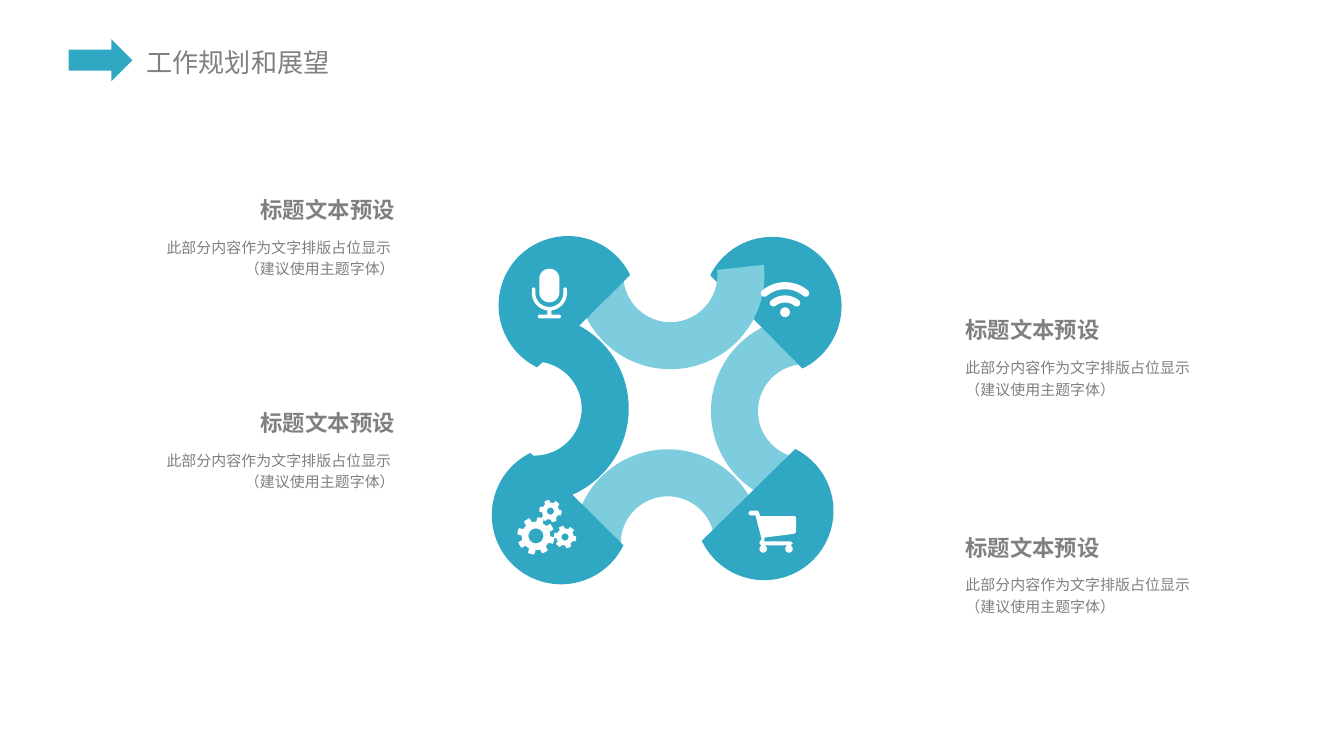
import math

import pptx
import pptx.dml.color
import pptx.enum.shapes
import pptx.enum.text
import pptx.util
from lxml import etree

Pt = pptx.util.Pt
RGBColor = pptx.dml.color.RGBColor
SHAPE = pptx.enum.shapes.MSO_SHAPE
ALIGN = pptx.enum.text.PP_ALIGN
ANCHOR = pptx.enum.text.MSO_ANCHOR

TEAL = RGBColor(0x30, 0xA8, 0xC4)
LIGHT_TEAL = RGBColor(0x7E, 0xCD, 0xDF)
WHITE = RGBColor(0xFF, 0xFF, 0xFF)
GRAY = RGBColor(0x80, 0x80, 0x80)
FONT = "Noto Sans CJK SC"

ARC_SIZE = 100.8
CHORD_SIZE = 74.2
CHORD_ADJUSTMENTS = (28.09, 158.76)

HEADING = "标题文本预设"
BODY = "此部分内容作为文字排版占位显示 \n（建议使用主题字体）"


def paint(s, color):
    s.shadow.inherit = False
    s.fill.solid()
    s.fill.fore_color.rgb = color
    s.line.fill.background()


def add_preset(slide, kind, x, y, w, h, color, rot=0, flip=None):
    s = slide.shapes.add_shape(kind, Pt(x), Pt(y), Pt(w), Pt(h))
    paint(s, color)
    s.rotation = rot
    if flip:
        s.element.spPr.xfrm.set(flip, "1")
    return s


def add_chord(slide, x, y, rot, flip=None):
    s = add_preset(slide, SHAPE.CHORD, x, y, CHORD_SIZE, CHORD_SIZE, TEAL, rot, flip)
    for i, value in enumerate(CHORD_ADJUSTMENTS):
        s.adjustments[i] = value


def add_text(slide, text, x, y, w, h, size, bold=False, align=ALIGN.LEFT,
             anchor=ANCHOR.TOP, wrap=False, spacing=None, margins=(0, 0)):
    tf = slide.shapes.add_textbox(Pt(x), Pt(y), Pt(w), Pt(h)).text_frame
    tf.word_wrap = wrap
    tf.vertical_anchor = anchor
    tf.margin_left = tf.margin_right = Pt(margins[0])
    tf.margin_top = tf.margin_bottom = Pt(margins[1])
    p = tf.paragraphs[0]
    p.text = text.replace("\n", "\v")
    p.alignment = align
    p.line_spacing = spacing
    for r in p.runs:
        r.font.size = Pt(size)
        r.font.bold = bold
        r.font.name = FONT
        r.font.color.rgb = GRAY
        rPr = r.font._element
        ea = etree.SubElement(rPr, rPr.find("{*}latin").tag.replace("latin", "ea"))
        ea.set("typeface", FONT)


def add_text_block(slide, x, y, align):
    add_text(slide, HEADING, x, y, 129.6, 23, 12, bold=True, align=align,
             anchor=ANCHOR.BOTTOM)
    add_text(slide, BODY, x, y + 22.5, 129.6, 36.7, 8, align=align,
             anchor=ANCHOR.MIDDLE, wrap=True, spacing=1.2)


# Outlines for icons: each is a list of points
def arc(cx, cy, radius, start=0, end=360, steps=24):
    angles = [math.radians(start + (end - start) * i / steps) for i in range(steps + 1)]
    return [(cx + radius * math.cos(a), cy + radius * math.sin(a)) for a in angles]


def rect(x1, y1, x2, y2):
    return [(x1, y1), (x2, y1), (x2, y2), (x1, y2)]


def band(cx, cy, outer, inner, start, end):
    """Ring segment with round ends."""
    middle, cap = (outer + inner) / 2, (outer - inner) / 2
    ends = [arc(cx, cy, middle, a, a, 1)[0] for a in (start, end)]
    return (arc(cx, cy, outer, start, end) + arc(*ends[1], cap, end, end + 180, 8)
            + arc(cx, cy, inner, end, start)
            + arc(*ends[0], cap, start + 180, start + 360, 8))


def gear(cx, cy, radius, hole, teeth, turn):
    root, pitch = radius * 0.76, 360 / teeth
    outline = []
    for i in range(teeth):
        a = turn + i * pitch
        outline += arc(cx, cy, radius, a - pitch * 0.22, a + pitch * 0.22, 3)
        outline += arc(cx, cy, root, a + pitch * 0.3, a + pitch * 0.7, 3)
    return [outline, arc(cx, cy, hole)]


def add_icon(slide, outlines):
    fb = None
    for outline in outlines:
        points = [(Pt(x), Pt(y)) for x, y in outline]
        if fb is None:
            fb = slide.shapes.build_freeform(*points[0])
        else:
            fb.move_to(*points[0])
        fb.add_line_segments(points[1:], close=True)
    paint(fb.convert_to_shape(), WHITE)


def add_icons(slide):
    # Gears
    add_icon(slide, gear(287.1, 287.1, 10, 4, 8, 15)
             + gear(294.9, 273.8, 6, 1.9, 6, 10)
             + gear(302.7, 287.7, 6, 1.9, 6, 10))

    # Microphone: capsule, cradle, stem, base
    cx = 294.3
    add_icon(slide, [
        arc(cx, 149.4, 5.4, 180, 360) + arc(cx, 156.6, 5.4, 0, 180),
        arc(cx, 157, 9.4, 0, 180) + arc(cx - 8.45, 155, 0.95, 180, 360, 8)
        + arc(cx, 157, 7.5, 180, 0) + arc(cx + 8.45, 155, 0.95, 180, 360, 8),
        rect(cx - 1.1, 166.3, cx + 1.1, 168.6),
        arc(289.1, 169.6, 1, 90, 270, 8) + arc(299.5, 169.6, 1, -90, 90, 8)])

    # Wireless signal
    cx, cy = 420.6, 170.3
    add_icon(slide, [band(cx, cy, 19.1, 15.3, 230, 310),
                     band(cx, cy, 12, 8.2, 232, 308),
                     arc(cx, 167.3, 2.6)])

    # Shopping cart
    body = [(401.8, 273.6), (406.1, 273.6), (406.8, 275), (407.2, 276.5),
            (425.8, 276.5), (426.5, 277.2), (426.5, 285.1), (425.5, 286),
            (409.7, 288), (409.3, 290.1), (423.6, 290.1), (424.8, 291.1),
            (423.6, 292.2), (407.8, 292.2), (406.8, 291), (408, 288.7),
            (404.8, 276.2), (401.8, 276.2), (401, 275)]
    add_icon(slide, [body, arc(408.9, 294.1, 2), arc(422.7, 294.1, 2)])


def main():
    prs = pptx.Presentation()
    prs.slide_width, prs.slide_height = Pt(720), Pt(405)
    slide = prs.slides.add_slide(prs.slide_layouts[6])

    # Header
    add_text(slide, "工作规划和展望", 71.3, 21.3, 114.5, 24.5, 14, margins=(7.2, 3.6))
    add_preset(slide, SHAPE.RIGHT_ARROW, 36.7, 21, 34.2, 22.5, TEAL)

    # Ring of linked arcs and chords
    def link(x, y, color, rot, flip=None):
        add_preset(slide, SHAPE.BLOCK_ARC, x, y, ARC_SIZE, ARC_SIZE, color, rot, flip)

    link(380.9, 169.9, LIGHT_TEAL, 97.2, "flipV")
    add_chord(slide, 376.6, 126.9, 159.6)
    link(308.7, 97, LIGHT_TEAL, 173.7)
    link(236, 168.5, TEAL, 98)
    link(307.3, 240.7, LIGHT_TEAL, 173, "flipV")
    add_chord(slide, 267.1, 126.5, 69.5)
    add_chord(slide, 263.5, 238.8, 110.5, "flipH")
    add_chord(slide, 372.3, 236.6, 21.2, "flipH")
    add_icons(slide)

    # Text blocks beside the ring
    for x, y, align in ((82, 96.3, ALIGN.RIGHT), (517.2, 277.3, ALIGN.LEFT),
                        (517.2, 161, ALIGN.LEFT), (82, 210.5, ALIGN.RIGHT)):
        add_text_block(slide, x, y, align)

    prs.save("out.pptx")


if __name__ == "__main__":
    main()
